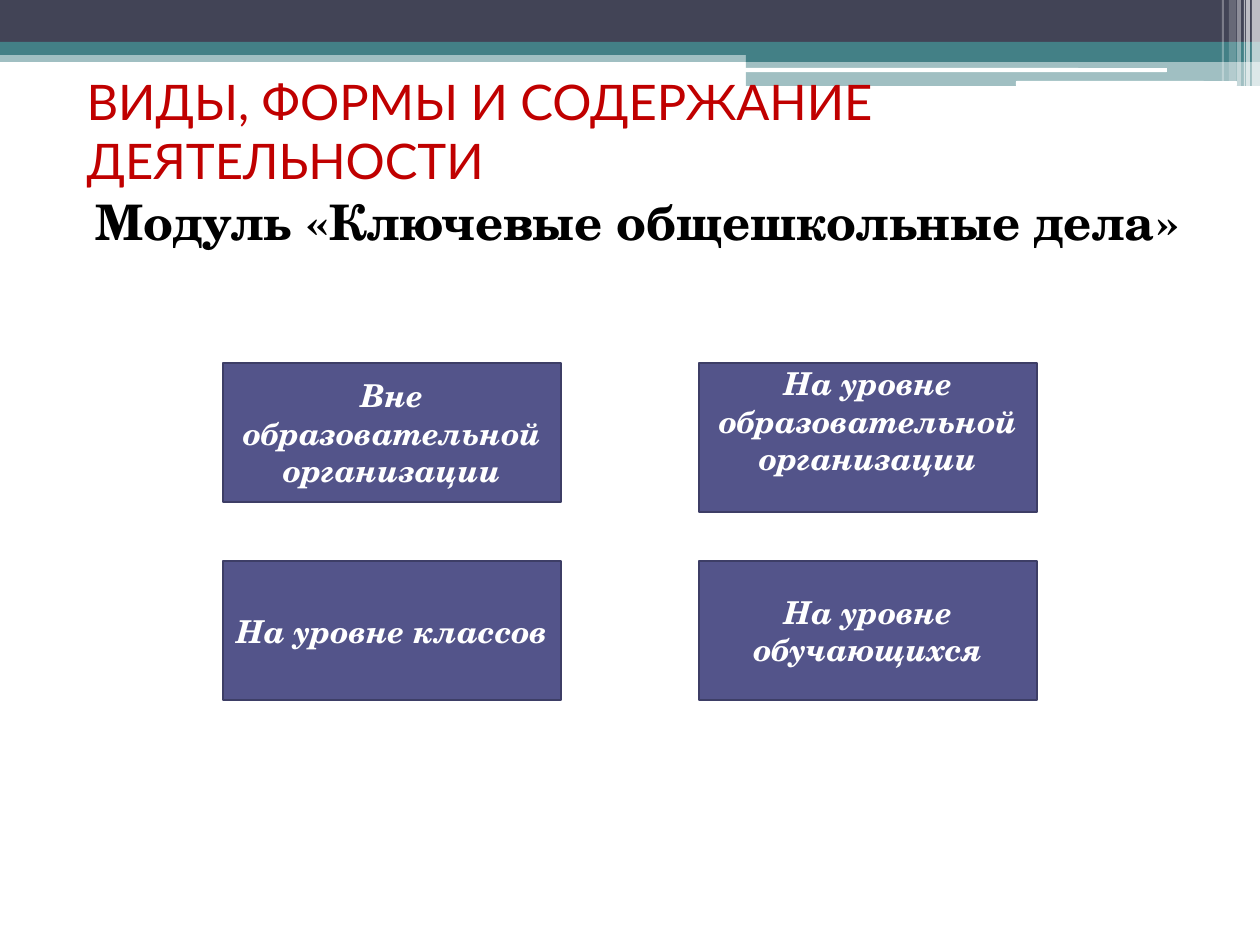
from lxml.etree import SubElement
from pptx import Presentation
from pptx.dml.color import RGBColor
from pptx.enum.shapes import MSO_SHAPE as Kind
from pptx.enum.text import MSO_ANCHOR as Anchor, MSO_AUTO_SIZE as Fit, PP_ALIGN as Align
from pptx.oxml.ns import qn
from pptx.util import Pt

PX = 9144000 // 1260
WHITE = RGBColor(0xFF, 0xFF, 0xFF)
BLACK = RGBColor(0, 0, 0)
RED = RGBColor(0xC0, 0, 0)
DARK = RGBColor(0x42, 0x44, 0x56)
TEAL = RGBColor(0x43, 0x80, 0x86)
VIOLET = RGBColor(0x53, 0x54, 0x8A)
EDGE = RGBColor(0x3D, 0x3E, 0x66)

deck = Presentation()
deck.slide_width, deck.slide_height = 9144000, 6858000
slide = deck.slides.add_slide(deck.slide_layouts[1])


def block(x, y, w, h, color, kind=Kind.RECTANGLE):
    shape = slide.shapes.add_shape(kind, x * PX, y * PX, w * PX, h * PX)
    shape.shadow.inherit = False
    shape.fill.solid()
    shape.fill.fore_color.rgb = color
    shape.line.fill.background()
    return shape


def write(shape, text, align, look):
    frame = shape.text_frame
    frame.word_wrap = True
    frame.auto_size = Fit.NONE
    para = frame.paragraphs[0]
    para.alignment = align
    run = para.add_run()
    run.text = text
    for key, value in look.items():
        if key == "color":
            run.font.color.rgb = value
        else:
            setattr(run.font, key, value)
    return frame


bands = [
    (0, 50, 1260, 12, TEAL, 50),
    (0, 0, 1260, 43, DARK, 100),
    (0, 42, 1260, 13, TEAL, 100),
    (746, 49, 514, 13, TEAL, 100),
    (746, 61, 514, 25, TEAL, 50),
    (1252, 0, 8, 86, WHITE, 65),
    (1246, 0, 4, 86, WHITE, 65),
    (1244, 0, 1, 86, WHITE, 60),
    (1237, 0, 4, 86, WHITE, 40),
    (1229, 0, 7, 81, WHITE, 20),
    (1222, 0, 2, 81, WHITE, 30),
]
for x, y, w, h, color, alpha in bands:
    band = block(x, y, w, h, color)
    if alpha < 100:
        tint = band.fill._xPr.find(".//" + qn("a:srgbClr"))
        SubElement(tint, qn("a:alpha"), val=str(alpha * 1000))

for x, y, w, h in [(745, 68, 422, 4), (1016, 81, 221, 5)]:
    block(x, y, w, h, WHITE, Kind.ROUNDED_RECTANGLE)

title, body = slide.placeholders
for holder, x, y, h in [(title, 74, 86, 89), (body, 63, 185, 139)]:
    holder.left, holder.top = x * PX, y * PX
    holder.width, holder.height = 1134 * PX, h * PX
    tree = holder.element.getparent()
    tree.append(holder.element)

head = {"name": "Lato", "size": Pt(28), "color": RED}
frame = write(title, "ВИДЫ, ФОРМЫ И СОДЕРЖАНИЕ ДЕЯТЕЛЬНОСТИ", Align.LEFT, head)
frame.vertical_anchor = Anchor.MIDDLE

lead = {"name": "TeX Gyre Schola", "size": Pt(28), "bold": True, "color": BLACK}
frame = write(body, "Модуль «Ключевые общешкольные дела»", Align.CENTER, lead)
frame.vertical_anchor = Anchor.TOP
para = frame.paragraphs[0]
para.space_before = Pt(0)
props = para._p.get_or_add_pPr()
props.set("marL", str(50 * PX))
props.set("indent", str(-35 * PX))
SubElement(props, qn("a:buNone"))

label = {"name": "TeX Gyre Schola", "size": Pt(18), "bold": True, "italic": True, "color": WHITE}
cards = [
    ("Вне образовательной организации", 139, 6, 6),
    ("На уровне образовательной организации", 149, 0, 34),
    ("На уровне классов", 139, 6, 6),
    ("На уровне обучающихся", 139, 6, 6),
]
for i, (text, h, top, low) in enumerate(cards):
    row, col = divmod(i, 2)
    card = block(223 + col * 476, 363 + row * 198, 338, h, VIOLET)
    card.line.color.rgb = EDGE
    card.line.width = Pt(1.5)
    frame = write(card, text, Align.CENTER, label)
    frame.vertical_anchor = Anchor.MIDDLE
    frame.margin_top, frame.margin_bottom = top * PX, low * PX

deck.save("out.pptx")
